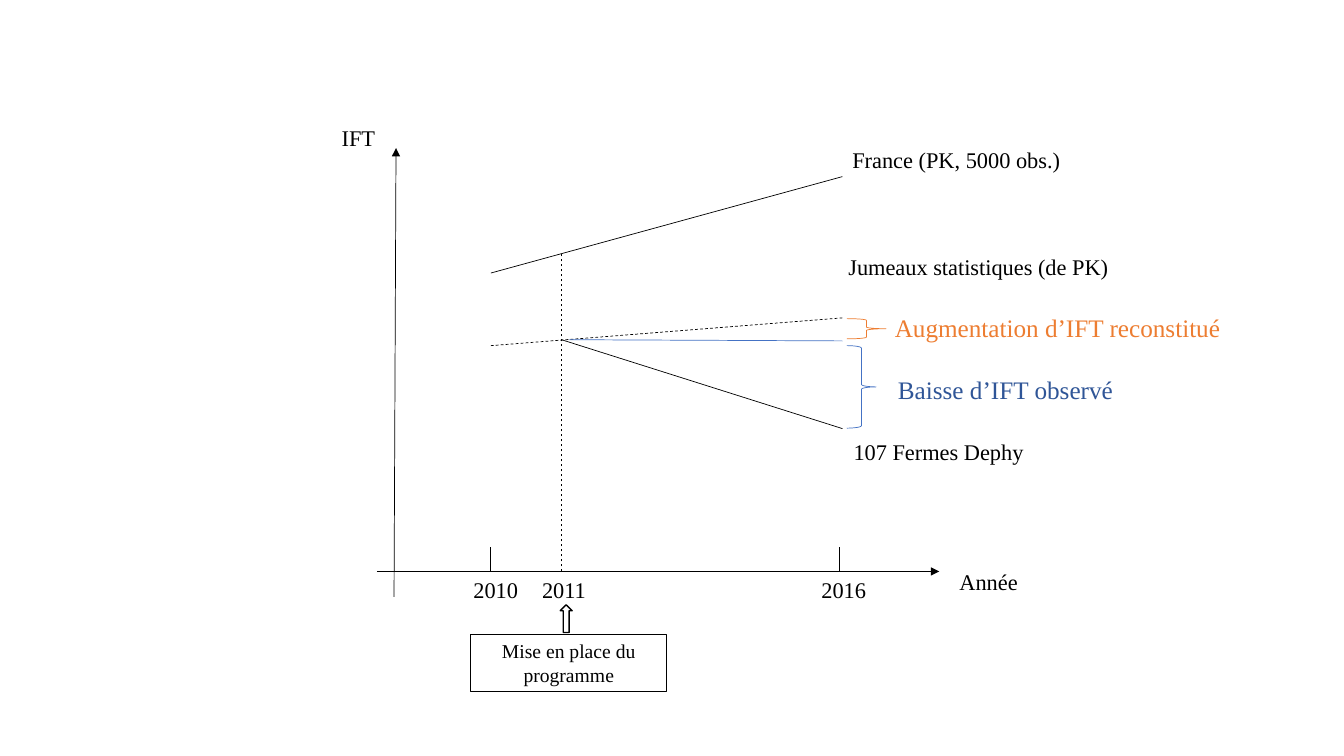
from lxml import etree
from pptx import Presentation
from pptx.dml.color import RGBColor
from pptx.enum import dml, shapes, text
from pptx.oxml.ns import qn
from pptx.util import Cm, Pt

BLACK = RGBColor(0x00, 0x00, 0x00)
WHITE = RGBColor(0xFF, 0xFF, 0xFF)
ORANGE = RGBColor(0xED, 0x7D, 0x31)
BLUE = RGBColor(0x44, 0x72, 0xC4)
DARK_BLUE = RGBColor(0x2F, 0x55, 0x97)
FONT = "Times New Roman"

# Shared positions on the graph, in centimetres
AXIS_Y = 14.4
X_2010, X_2011, X_2016 = 12.37, 14.15, 21.16
CURVE_END = 21.23
TICK = 0.61

prs = Presentation()
prs.slide_width, prs.slide_height = Cm(33.87), Cm(19.05)
s = prs.slides.add_slide(prs.slide_layouts[6])


def add_line(x1, y1, x2, y2, color=BLACK, dashed=False, arrow=False):
    line = s.shapes.add_connector(
        shapes.MSO_CONNECTOR.STRAIGHT, Cm(x1), Cm(y1), Cm(x2), Cm(y2))
    line.line.color.rgb = color
    line.line.width = Pt(0.5)
    if dashed:
        line.line.dash_style = dml.MSO_LINE.DASH
    if arrow:
        etree.SubElement(line.line._get_or_add_ln(), qn("a:tailEnd"), type="triangle")
    etree.SubElement(line._element.spPr, qn("a:effectLst"))


def write(sp, words, size, color):
    tf = sp.text_frame
    tf.word_wrap = True
    tf.vertical_anchor = text.MSO_ANCHOR.TOP
    p = tf.paragraphs[0]
    p.text = words
    p.font.name, p.font.size = FONT, Pt(size)
    p.font.color.rgb = color
    return p


# Axes
add_line(9.5, AXIS_Y, 23.67, AXIS_Y, arrow=True)
add_line(9.93, 15.04, 9.98, 3.73, arrow=True)

# Year ticks and start of the programme
for x in (X_2010, X_2016):
    add_line(x, AXIS_Y, x, AXIS_Y - TICK)
add_line(X_2011, AXIS_Y, X_2011, 6.35, dashed=True)

# Curves: France, statistical twins, farms, constant level
add_line(X_2010, 6.88, CURVE_END, 4.45)
add_line(CURVE_END, 8.01, X_2010, 8.71, dashed=True)
add_line(X_2011, 8.56, CURVE_END, 10.8)
add_line(14.35, 8.56, CURVE_END, 8.59, color=BLUE)

# Labels: words, left, top, width, height, size, colour
labels = [
    ("IFT", 8.36, 3, 3.91, 0.94, 16, BLACK),
    ("Année", 23.93, 14.2, 2.51, 0.94, 16, BLACK),
    ("2010", 11.68, AXIS_Y, 2.51, 0.94, 16, BLACK),
    ("2011", 13.41, AXIS_Y, 2.51, 0.94, 16, BLACK),
    ("2016", 20.45, AXIS_Y, 2.51, 0.94, 16, BLACK),
    ("France (PK, 5000 obs.)", 21.23, 3.56, 6.53, 5.05, 16, BLACK),
    ("Jumeaux statistiques (de PK)", 21.13, 6.25, 7.82, 1.63, 16, BLACK),
    ("107 Fermes Dephy", 21.26, 10.92, 7.7, 0.94, 16, BLACK),
    ("Augmentation d’IFT reconstitué", 22.3, 7.75, 9.63, 1.8, 18, ORANGE),
    ("Baisse d’IFT observé", 22.38, 9.3, 9.63, 1.02, 18, DARK_BLUE),
]
for words, left, top, width, height, size, color in labels:
    box = s.shapes.add_textbox(Cm(left), Cm(top), Cm(width), Cm(height))
    write(box, words, size, color)

# Braces, programme box and its arrow
RECT = shapes.MSO_SHAPE.RECTANGLE
BRACE = shapes.MSO_SHAPE.RIGHT_BRACE
ARROW = shapes.MSO_SHAPE.UP_ARROW
outlines = [
    (BRACE, 21.34, 8.03, 0.99, 0.51, None, ORANGE, 0.5),
    (BRACE, 21.34, 8.71, 0.74, 2.08, None, BLUE, 0.5),
    (ARROW, 14.12, 15.24, 0.3, 0.7, WHITE, BLACK, 1),
    (RECT, 11.86, 15.98, 4.95, 1.45, None, BLACK, 0.75),
]
for kind, left, top, width, height, fill, color, weight in outlines:
    sp = s.shapes.add_shape(kind, Cm(left), Cm(top), Cm(width), Cm(height))
    sp.shadow.inherit = False
    if fill is None:
        sp.fill.background()
    else:
        sp.fill.solid()
        sp.fill.fore_color.rgb = fill
    sp.line.color.rgb = color
    sp.line.width = Pt(weight)
    if kind == RECT:
        p = write(sp, "Mise en place du programme", 14, BLACK)
        p.alignment = text.PP_ALIGN.CENTER

prs.save("out.pptx")
